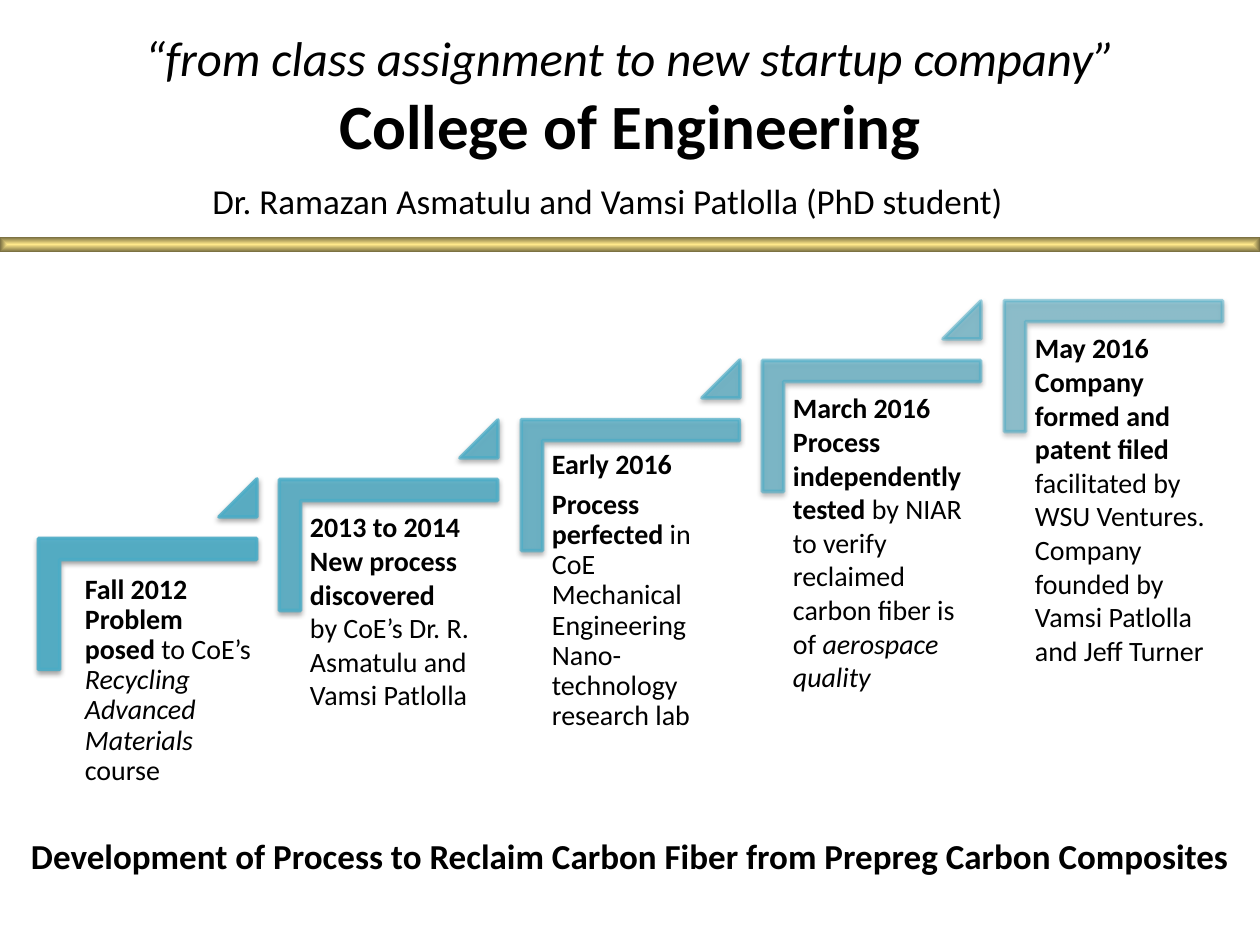
from lxml import etree
from pptx import Presentation
from pptx.dml.color import RGBColor
from pptx.enum.shapes import MSO_SHAPE
from pptx.enum.text import MSO_ANCHOR, PP_ALIGN
from pptx.oxml.ns import qn
from pptx.util import Emu, Pt

CORNER, TRI, RECT = MSO_SHAPE.CORNER, MSO_SHAPE.ISOSCELES_TRIANGLE, MSO_SHAPE.RECTANGLE
TOP, LEFT, CENTER = MSO_ANCHOR.TOP, PP_ALIGN.LEFT, PP_ALIGN.CENTER
BLACK = RGBColor(0x00, 0x00, 0x00)
TEAL = RGBColor(0x4B, 0xAC, 0xC6)
GOLD = RGBColor(0xFF, 0xE9, 0x8B)
BRONZE = RGBColor(0x76, 0x6C, 0x40)

PLAIN = {"bold": False, "italic": False}
BOLD = {"bold": True, "italic": False}
ITALIC = {"bold": False, "italic": True}

TITLE = [
    ("“from class assignment to new startup company”", 27.9, ITALIC),
    ("College of Engineering", 36, BOLD),
]
AUTHORS = "Dr. Ramazan Asmatulu and Vamsi Patlolla (PhD student)"
TOPIC = "Development of Process to Reclaim Carbon Fiber from Prepreg Carbon Composites"

LOOSE = {"line_spacing": 0.9, "space_after": Pt(5.6)}
STEPS = [
    (LOOSE, [
        [("Fall 2012 Problem posed ", BOLD), ("to CoE’s ", PLAIN),
         ("Recycling Advanced Materials ", ITALIC), ("course", PLAIN)],
    ]),
    ({}, [
        [("2013 to 2014", BOLD)],
        [("New process discovered", BOLD)],
        [("by CoE’s Dr. R. Asmatulu and Vamsi Patlolla", PLAIN)],
    ]),
    (LOOSE, [
        [("Early 2016", BOLD)],
        [("Process perfected ", BOLD),
         ("in CoE Mechanical Engineering Nano-technology research lab", PLAIN)],
    ]),
    ({}, [
        [("March 2016", BOLD)],
        [("Process independently tested", BOLD),
         (" by NIAR to verify reclaimed carbon fiber is of ", PLAIN),
         ("aerospace quality", ITALIC)],
    ]),
    ({}, [
        [("May 2016", BOLD)],
        [("Company formed and patent filed", BOLD)],
        [("facilitated by WSU Ventures. Company founded by "
          "Vamsi Patlolla and Jeff Turner", PLAIN)],
    ]),
]
RUN, RISE = 966, 238


def px(n):
    return Emu(round(n * 914400 / 126))


def put(obj, vals):
    for key, val in vals.items():
        setattr(obj, key, val)


def style(run, size, look):
    put(run.font, {"name": "Calibri", "size": Pt(size), **look})
    run.font.color.rgb = BLACK


def text(box, paras, size, align=LEFT, form={}, pad=None):
    shape = slide.shapes.add_textbox(*map(px, box))
    frame = shape.text_frame
    frame.word_wrap = True
    if pad is not None:
        sides = ("left", "top", "right", "bottom")
        put(frame, {"margin_" + side: px(pad) for side in sides})
    for i, runs in enumerate(paras):
        para = frame.add_paragraph() if i else frame.paragraphs[0]
        put(para, {"alignment": align, **form})
        for words, look in runs:
            run = para.add_run()
            run.text = words
            style(run, size, look)


def piece(kind, box, adjs, alpha, turn=0):
    shape = slide.shapes.add_shape(kind, *map(px, box))
    shape.rotation = turn
    for i, adj in enumerate(adjs):
        shape.adjustments[i] = adj
    shape.fill.solid()
    shape.fill.fore_color.rgb = TEAL
    shape.line.color.rgb = TEAL
    shape.line.width = Pt(2)
    props = shape.element.spPr
    for clr in props.iter(qn("a:srgbClr")):
        etree.SubElement(clr, qn("a:alpha"), val=str(alpha * 1000))
    shape.shadow.inherit = False
    shade = etree.SubElement(
        props.find(qn("a:effectLst")), qn("a:outerShdw"),
        blurRad=str(Pt(3.1)), dist=str(Pt(1.6)), dir="5400000", rotWithShape="0")
    clr = etree.SubElement(shade, qn("a:srgbClr"), val=str(BLACK))
    etree.SubElement(clr, qn("a:alpha"), val="38000")


def band(box):
    shape = slide.shapes.add_shape(RECT, *map(px, box))
    shape.shadow.inherit = False
    shape.line.fill.background()
    shape.fill.gradient()
    for stop, pos, clr in zip(shape.fill.gradient_stops, (0, 1), (GOLD, BRONZE)):
        stop.position = pos
        stop.color.rgb = clr
    grad = shape.element.spPr.find(qn("a:gradFill"))
    grad.remove(grad.find(qn("a:lin")))
    way = etree.SubElement(grad, qn("a:path"), {"path": "shape"})
    etree.SubElement(way, qn("a:fillToRect"), {side: "50000" for side in "ltrb"})


deck = Presentation()
deck.slide_width, deck.slide_height = px(1260), px(945)
slide = deck.slides.add_slide(deck.slide_layouts[5])

title = slide.shapes.title
put(title, dict(zip(("left", "top", "width", "height"), map(px, (87, 28, 1086, 183)))))
put(title.text_frame, {"vertical_anchor": TOP, "margin_top": 0, "word_wrap": True})
head = title.text_frame.paragraphs[0]
head.alignment = CENTER
for i, (words, size, look) in enumerate(TITLE):
    if i:
        head.add_line_break()
    run = head.add_run()
    run.text = words
    style(run, size, look)

last = len(STEPS) - 1
for i, (form, paras) in enumerate(STEPS):
    x, y = RUN * i // last, -(RISE * i // last)
    piece(CORNER, (82 + x, 495 + y, 131, 218), (0.161, 0.161), 90 - 10 * i, 90)
    box = (60 + x, 560 + y, 197, 173) if i else (76, 566, 190, 213)
    text(box, paras, 16, form=form, pad=9)
    if i < last:
        piece(TRI, (219 + x, 479 + y, 38, 38), (1,), 85 - 10 * i)

text((200, 173, 859, 97), [[(AUTHORS, PLAIN)]], 20)
text((14, 828, 1232, 55), [[(TOPIC, BOLD)]], 20, CENTER)
band((0, 237, 1260, 15))

deck.save("out.pptx")
